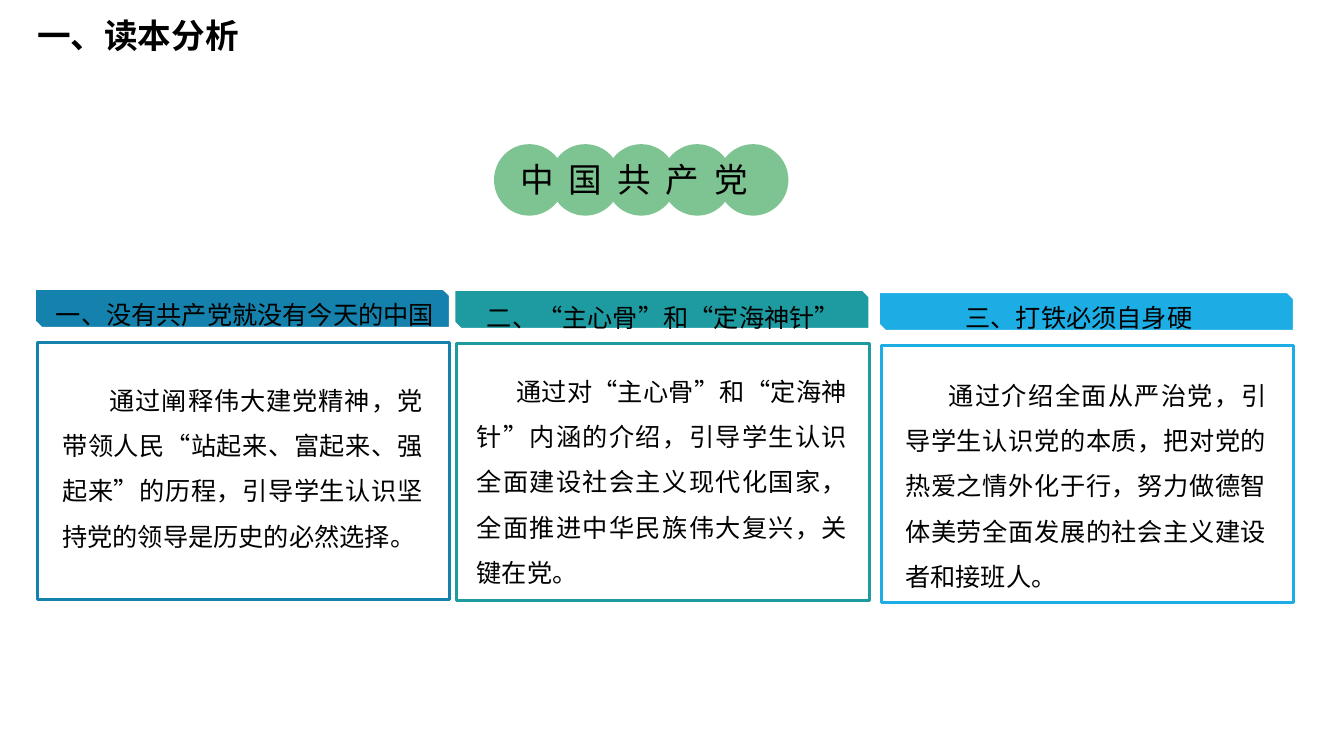
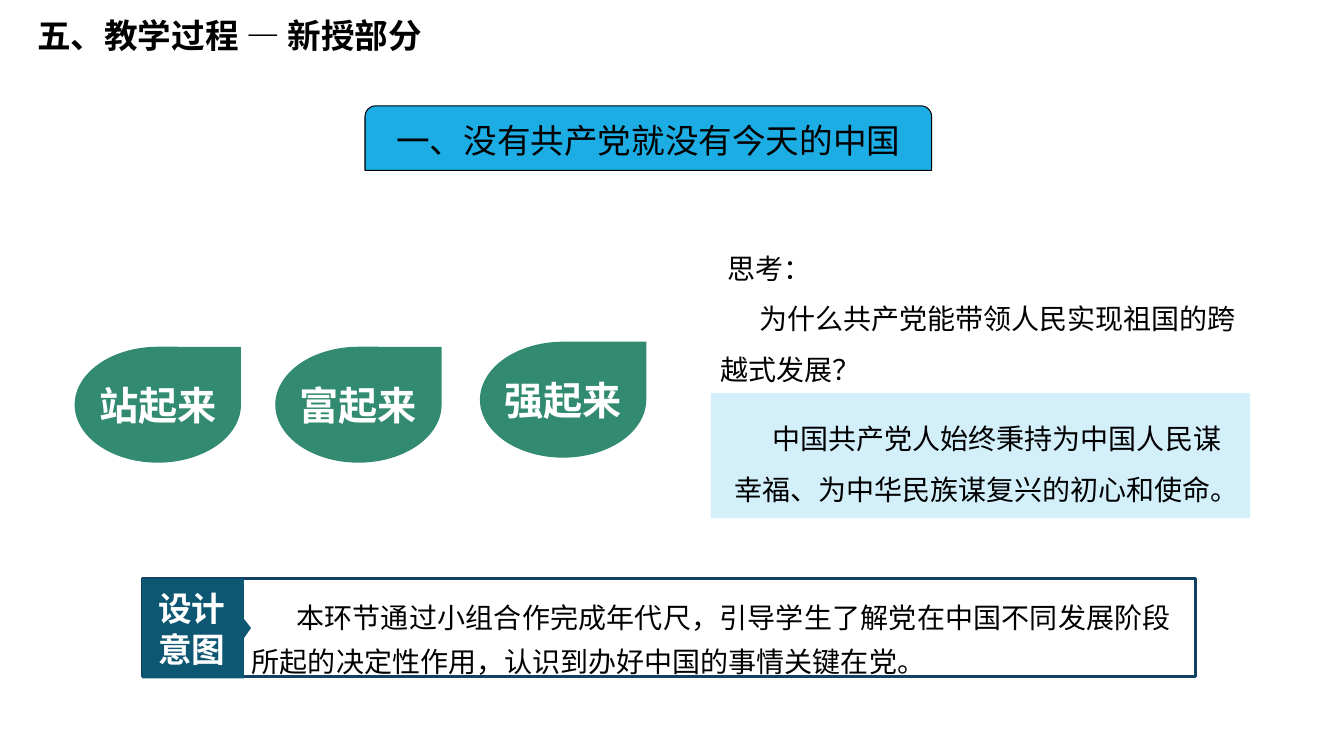
"""Build two lesson slides: the reader overview and the first teaching section."""
from lxml.etree import SubElement
from pptx import Presentation
from pptx.dml.color import RGBColor
from pptx.enum.shapes import MSO_SHAPE as SHAPE
from pptx.enum.text import MSO_ANCHOR as ANCHOR, PP_ALIGN as ALIGN
from pptx.oxml.ns import qn
from pptx.util import Inches, Pt

FONT = "Noto Sans CJK SC"
BLACK, WHITE = "000000", "FFFFFF"
BLUE, TEAL, SKY = "1482AC", "1D9BA1", "1CADE4"
CIRCLE_GREEN, LEAF_GREEN = "7EC492", "328B71"
NAVY, PETROL, PALE_BLUE = "134163", "0E5772", "D2EFFA"
SECTION = "一、没有共产党就没有今天的中国"


def paint(shape, fill=None, line=None, width=1):
    """Set fill and outline, None meaning empty, and drop the shadow."""
    shape.shadow.inherit = False
    if fill:
        shape.fill.solid()
        shape.fill.fore_color.rgb = RGBColor.from_string(fill)
    else:
        shape.fill.background()
    if line:
        shape.line.color.rgb = RGBColor.from_string(line)
        shape.line.width = Pt(width)
    else:
        shape.line.fill.background()
    return shape


def write(shape, text, size=18, color=BLACK, bold=False, align=ALIGN.LEFT, anchor=ANCHOR.TOP,
          spacing=1.0, indents=(0,), tracking=0, wrap=True, left=0.1, right=0.1):
    """Write one paragraph per line of text, each with its first-line indent."""
    frame = shape.text_frame
    frame.word_wrap = wrap
    frame.vertical_anchor = anchor
    frame.margin_left, frame.margin_right = Inches(left), Inches(right)
    for index, content in enumerate(text.split("\n")):
        paragraph = frame.add_paragraph() if index else frame.paragraphs[0]
        paragraph.alignment = align
        paragraph.line_spacing = spacing
        indent = indents[min(index, len(indents) - 1)]
        paragraph._p.get_or_add_pPr().set("indent", str(Inches(indent)))
        run = paragraph.add_run()
        run.text = content
        run.font.name, run.font.size, run.font.bold = FONT, Pt(size), bold
        run.font.color.rgb = RGBColor.from_string(color)
        properties = run._r.get_or_add_rPr()
        SubElement(properties, qn("a:ea")).set("typeface", FONT)
        if tracking:
            properties.set("spc", str(round(tracking * 100)))


presentation = Presentation()
presentation.slide_width, presentation.slide_height = Inches(13.33), Inches(7.5)
slides = []
for title in ("一、读本分析", "五、教学过程 — 新授部分"):
    slide = presentation.slides.add_slide(presentation.slide_layouts[6])
    box = slide.shapes.add_textbox(Inches(0.27), Inches(0.1), Inches(8), Inches(0.5))
    write(box, title, size=24, bold=True)
    slides.append(slide)
overview, lesson = [slide.shapes for slide in slides]

for index in range(5):
    paint(overview.add_shape(SHAPE.OVAL, Inches(4.9 + 2.22 * index / 4), Inches(1.43),
                             Inches(0.7), Inches(0.71)), CIRCLE_GREEN)
box = overview.add_textbox(Inches(5.06), Inches(1.53), Inches(2.9), Inches(0.5))
write(box, "中国共产党", size=24, tracking=10.7)

cards = [
    (BLUE, 0.35, 2.87, SECTION, 0.43, 2.77, (0.52, 3.62, 3.77), 0.47,
     "通过阐释伟大建党精神，党带领人民“站起来、富起来、强起来”的历程，"
     "引导学生认识坚持党的领导是历史的必然选择。"),
    (TEAL, 4.51, 2.88, "二、“主心骨”和“定海神针”", 4.58, 2.8, (4.63, 3.53, 3.87), 0.39,
     "通过对“主心骨”和“定海神针”内涵的介绍，引导学生认识全面建设社会主义现代化国家，"
     "全面推进中华民族伟大复兴，关键在党。"),
    (SKY, 8.72, 2.9, "三、打铁必须自身硬", 8.7, 2.8, (8.88, 3.57, 3.78), 0.43,
     "通过介绍全面从严治党，引导学生认识党的本质，把对党的热爱之情外化于行，"
     "努力做德智体美劳全面发展的社会主义建设者和接班人。"),
]
for color, left, top, heading, heading_left, heading_top, body, indent, text in cards:
    paint(overview.add_shape(SHAPE.SNIP_2_DIAG_RECTANGLE, Inches(left), Inches(top),
                             Inches(4.11), Inches(0.38)), color, WHITE)
    box = overview.add_textbox(Inches(heading_left), Inches(heading_top), Inches(4), Inches(0.5))
    write(box, heading, align=ALIGN.CENTER, spacing=1.5)
    paint(overview.add_shape(SHAPE.RECTANGLE, Inches(left + 0.02), Inches(top + 0.53),
                             Inches(4.09), Inches(2.55)), None, color, 2.25)
    body_left, body_top, body_width = body
    box = overview.add_textbox(Inches(body_left), Inches(body_top), Inches(body_width), Inches(2.37))
    write(box, text, align=ALIGN.JUSTIFY, spacing=1.5, indents=(indent,))

banner = paint(lesson.add_shape(SHAPE.ROUND_2_SAME_RECTANGLE, Inches(3.62), Inches(1.05),
                                Inches(5.62), Inches(0.64)), SKY, BLACK, 0.75)
write(banner, SECTION, size=24, align=ALIGN.CENTER, anchor=ANCHOR.MIDDLE)

for text, left, top in (("站起来", 0.74, 3.44), ("富起来", 2.73, 3.44), ("强起来", 4.76, 3.39)):
    leaf = paint(lesson.add_shape(SHAPE.TEAR, Inches(left), Inches(top),
                                  Inches(1.65), Inches(1.15)), LEAF_GREEN)
    write(leaf, text, size=28, color=WHITE, bold=True, align=ALIGN.CENTER,
          anchor=ANCHOR.MIDDLE, wrap=False)

question = lesson.add_textbox(Inches(7.05), Inches(2.28), Inches(5.46), Inches(1.61))
write(question, "思考：\n为什么共产党能带领人民实现祖国的跨越式发展？", size=20,
      spacing=1.5, indents=(0.07, 0.38))
answer = paint(lesson.add_shape(SHAPE.RECTANGLE, Inches(7.05), Inches(3.9),
                                Inches(5.35), Inches(1.24)), PALE_BLUE)
write(answer, "中国共产党人始终秉持为中国人民谋幸福、为中华民族谋复兴的初心和使命。", size=20,
      anchor=ANCHOR.MIDDLE, spacing=1.5, indents=(0.38,), left=0.23, right=0.08)

paint(lesson.add_shape(SHAPE.RECTANGLE, Inches(1.41), Inches(5.74),
                       Inches(10.45), Inches(0.97)), WHITE, NAVY, 2.25)
outline = [(2.42, 5.74), (2.42, 6.14), (2.49, 6.23), (2.42, 6.33), (2.42, 6.73), (1.41, 6.73)]
builder = lesson.build_freeform(Inches(1.41), Inches(5.74))
builder.add_line_segments([(Inches(x), Inches(y)) for x, y in outline])
label = paint(builder.convert_to_shape(), PETROL)
write(label, "设计\n意图", size=24, color=WHITE, bold=True, align=ALIGN.CENTER,
      anchor=ANCHOR.MIDDLE, left=0, right=0.1)
intent = lesson.add_textbox(Inches(2.4), Inches(5.81), Inches(9.31), Inches(0.93))
write(intent, "本环节通过小组合作完成年代尺，引导学生了解党在中国不同发展阶段所起的决定性作用，"
      "认识到办好中国的事情关键在党。", size=20, align=ALIGN.JUSTIFY, spacing=1.3, indents=(0.44,))

presentation.save("out.pptx")
